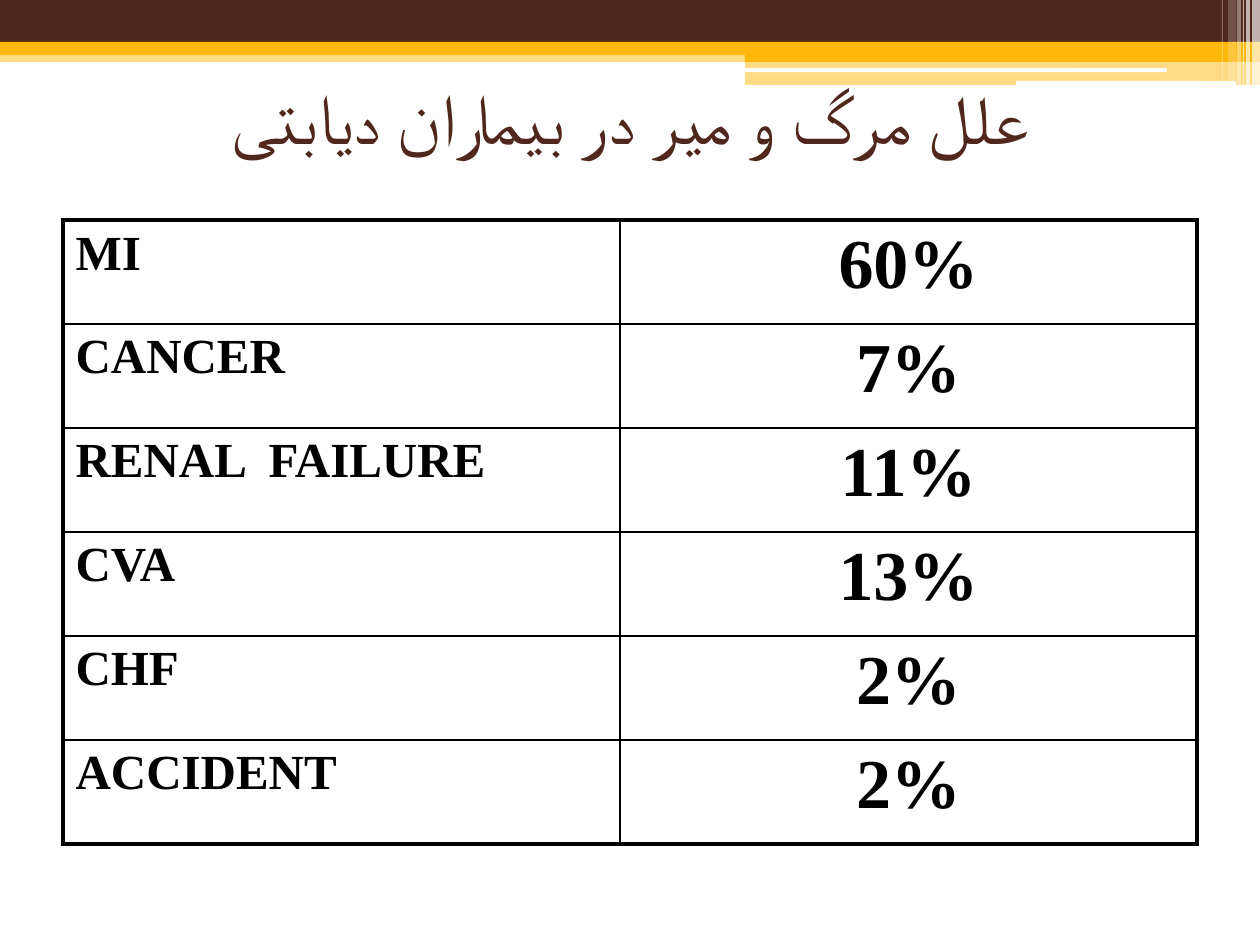
import pptx
import pptx.dml.color
import pptx.enum.shapes
import pptx.enum.text
import pptx.oxml
import pptx.oxml.ns
import pptx.util

PX = 914400 / 126
COLORS = {"brown": "4F271C", "gold": "FEB80A", "white": "FFFFFF", "black": "000000"}
RECT = pptx.enum.shapes.MSO_SHAPE.RECTANGLE
ROUND = pptx.enum.shapes.MSO_SHAPE.ROUNDED_RECTANGLE
CENTER = pptx.enum.text.PP_ALIGN.CENTER

# left, top, width, height, colour, opacity in percent
BANDS = [
    (0, 50, 1260, 12, "gold", 50),
    (0, 0, 1260, 42, "brown", 100),
    (0, 42, 1260, 13, "gold", 100),
    (745, 49, 515, 13, "gold", 100),
    (745, 60, 515, 25, "gold", 50),
]
SLITS = [(745, 68, 422, 4), (1016, 81, 220, 5)]
# left, width, height, opacity in percent
STRIPES = [
    (1252, 8, 86, 65),
    (1246, 4, 86, 65),
    (1243, 1, 86, 60),
    (1237, 4, 86, 40),
    (1228, 8, 81, 20),
    (1222, 1, 81, 30),
]
CAUSES = [
    ("MI", "60%"),
    ("CANCER", "7%"),
    ("RENAL  FAILURE", "11%"),
    ("CVA", "13%"),
    ("CHF", "2%"),
    ("ACCIDENT", "2%"),
]
COLUMNS = [557, 577]
ROW_HEIGHT = 104
THICK, THIN = 2.25, 1


def px(n):
    return pptx.util.Emu(round(n * PX))


def rgb(name):
    return pptx.dml.color.RGBColor.from_string(COLORS[name])


def add_bar(slide, left, top, width, height, color, opacity=100, kind=RECT):
    s = slide.shapes.add_shape(kind, px(left), px(top), px(width), px(height))
    s.shadow.inherit = False
    s.fill.solid()
    s.fill.fore_color.rgb = rgb(color)
    s.line.fill.background()
    if opacity < 100:
        clr = s.fill._xPr.find(".//" + pptx.oxml.ns.qn("a:srgbClr"))
        alpha = clr.makeelement(pptx.oxml.ns.qn("a:alpha"), {"val": str(opacity * 1000)})
        clr.append(alpha)
    return s


def add_decoration(slide):
    for band in BANDS:
        add_bar(slide, *band)
    for slit in SLITS:
        add_bar(slide, *slit, "white", kind=ROUND)
    for left, width, height, opacity in STRIPES:
        add_bar(slide, left, 0, width, height, "white", opacity)


def style_font(p, name, size, color, bold=False):
    p.font.name = name
    p.font.size = pptx.util.Pt(size)
    p.font.bold = bold
    p.font.color.rgb = rgb(color)


def add_title(slide, text):
    tf = slide.shapes.add_textbox(px(63), px(38), px(1134), px(158)).text_frame
    tf.word_wrap = True
    tf.vertical_anchor = pptx.enum.text.MSO_ANCHOR.MIDDLE
    p = tf.paragraphs[0]
    p.text = text
    p.alignment = CENTER
    p._p.get_or_add_pPr().set("rtl", "1")
    style_font(p, "Lato", 40, "brown")


def set_borders(cell, **widths):
    """Draw black borders; widths are points for L, R, T and B, in that order."""
    tc_pr = cell._tc.get_or_add_tcPr()
    for i, (side, width) in enumerate(widths.items()):
        tc_pr.insert(i, pptx.oxml.parse_xml(
            f'<a:ln{side} {pptx.oxml.ns.nsdecls("a")} w="{pptx.util.Pt(width)}">'
            f'<a:solidFill><a:srgbClr val="{COLORS["black"]}"/></a:solidFill>'
            f'</a:ln{side}>'))


def add_causes_table(slide):
    rows, cols = len(CAUSES), len(COLUMNS)
    table = slide.shapes.add_table(rows, cols, px(63), px(220), px(sum(COLUMNS)),
                                   px(rows * ROW_HEIGHT)).table
    table.first_row = table.horz_banding = False
    for column, width in zip(table.columns, COLUMNS):
        column.width = px(width)
    for i, texts in enumerate(CAUSES):
        table.rows[i].height = px(ROW_HEIGHT)
        for j, text in enumerate(texts):
            cell = table.cell(i, j)
            cell.fill.background()
            set_borders(cell,
                        L=THICK if j == 0 else THIN,
                        R=THICK if j == cols - 1 else THIN,
                        T=THICK if i == 0 else THIN,
                        B=THICK if i == rows - 1 else THIN)
            p = cell.text_frame.paragraphs[0]
            p.text = text
            if j == 1:
                p.alignment = CENTER
            style_font(p, "Times New Roman", 40 if j == 1 else 28, "black", bold=True)


def main():
    prs = pptx.Presentation()
    prs.slide_width, prs.slide_height = px(1260), px(945)
    slide = prs.slides.add_slide(prs.slide_layouts[6])
    add_decoration(slide)
    add_title(slide, "علل مرگ و میر در بیماران دیابتی")
    add_causes_table(slide)
    prs.save("out.pptx")


if __name__ == "__main__":
    main()
